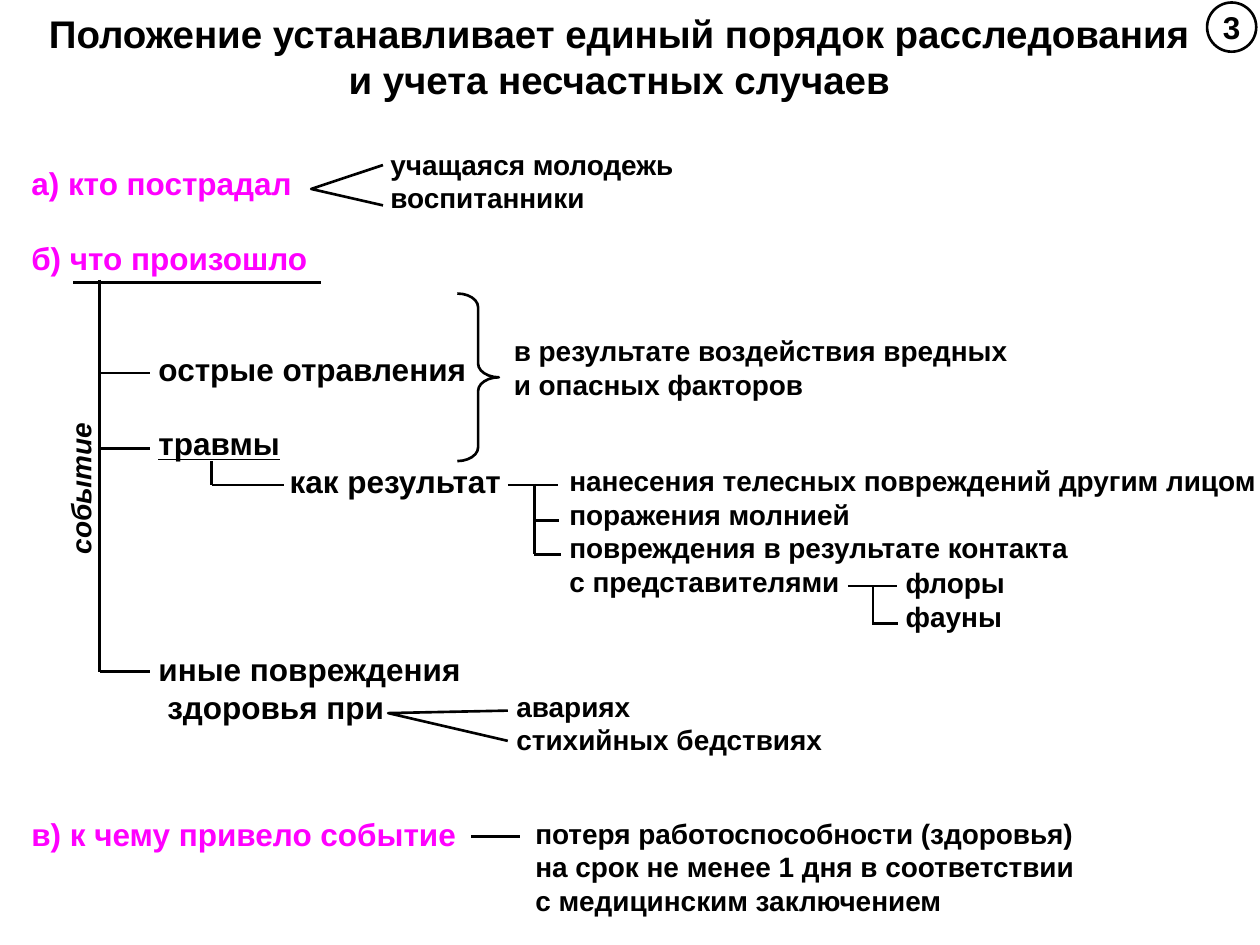
from dataclasses import dataclass

from lxml.etree import SubElement
from pptx import Presentation
from pptx.dml.color import RGBColor as RGB
from pptx.enum.shapes import MSO_CONNECTOR as CONN, MSO_SHAPE as SHAPE
from pptx.enum.text import MSO_ANCHOR as ANCHOR, MSO_AUTO_SIZE as AUTO, PP_ALIGN as ALIGN
from pptx.oxml.ns import qn
from pptx.util import Emu, Pt

EMU_PER_PX = 9144


@dataclass(frozen=True)
class Theme:
    """Colours, font and sizes of the slide."""
    font: str = "Arial"
    ink: RGB = RGB(0, 0, 0)
    accent: RGB = RGB(255, 0, 255)
    paper: RGB = RGB(255, 255, 255)
    title: int = 22
    label: int = 18
    detail: int = 16
    stroke: float = 1.5


@dataclass(frozen=True)
class Box:
    """Region of the slide in px."""
    x: int
    y: int
    w: int
    h: int

    def inner(self, dx, dy, w, h):
        """Return a box placed relative to this one."""
        return Box(self.x + dx, self.y + dy, w, h)

    def emu(self):
        """Return left, top, width and height in EMU."""
        return [px(v) for v in (self.x, self.y, self.w, self.h)]


T = Theme()


def px(v):
    """Turn px into EMU."""
    return Emu(v * EMU_PER_PX)


def write(sp, *lines, size=T.detail, color=T.ink, align=ALIGN.LEFT, anchor=ANCHOR.TOP,
          italic=False, underline=False):
    """Fill a shape with one bold paragraph per line."""
    tf = sp.text_frame
    tf.word_wrap, tf.auto_size, tf.vertical_anchor = True, AUTO.NONE, anchor
    for i, text in enumerate(lines):
        p = tf.paragraphs[0] if i == 0 else tf.add_paragraph()
        p.alignment = align
        r = p.add_run()
        r.text = text
        f = r.font
        f.name, f.size, f.bold, f.italic, f.underline = T.font, Pt(size), True, italic, underline
        f.color.rgb = color
    return sp


def text(s, box, *lines, **fmt):
    """Add a text box."""
    return write(s.shapes.add_textbox(*box.emu()), *lines, **fmt)


def label(s, box, *lines, **fmt):
    """Add a text box in the label size."""
    return text(s, box, *lines, size=T.label, **fmt)


def outline(sp):
    """Give a shape a plain outline and no fill."""
    sp.shadow.inherit = False
    sp.fill.background()
    sp.line.color.rgb, sp.line.width = T.ink, Pt(T.stroke)
    return sp


def line(s, box, x1, y1, x2, y2):
    """Draw a straight line in the box's coordinates."""
    c = s.shapes.add_connector(CONN.STRAIGHT, px(box.x + x1), px(box.y + y1),
                               px(box.x + x2), px(box.y + y2))
    c.line.color.rgb, c.line.width = T.ink, Pt(T.stroke)
    SubElement(c._element.spPr, qn("a:effectLst"))
    return c


def fork(s, box, *points):
    """Draw an open two-pronged outline."""
    start, *rest = [(box.x + x, box.y + y) for x, y in points]
    fb = s.shapes.build_freeform(*start, scale=EMU_PER_PX)
    fb.add_line_segments(rest, close=False)
    return outline(fb.convert_to_shape())


def comb(s, box, trunk, ticks):
    """Draw a vertical trunk (x, top, bottom) with ticks (x1, x2, y)."""
    x, top, bottom = trunk
    line(s, box, x, top, x, bottom)
    for x1, x2, y in ticks:
        line(s, box, x1, y, x2, y)


def header(s, box):
    """Place the title and the numbered badge."""
    title = s.shapes.title
    title.left, title.top, title.width, title.height = box.inner(25, 3, 933, 83).emu()
    write(title, "Положение устанавливает единый порядок расследования",
          "и учета несчастных случаев", size=T.title, align=ALIGN.CENTER)
    badge = outline(s.shapes.add_shape(SHAPE.OVAL, *box.inner(958, 2, 39, 39).emu()))
    write(badge, "3", size=T.label, align=ALIGN.CENTER, anchor=ANCHOR.MIDDLE)
    tf = badge.text_frame
    tf.margin_left = tf.margin_right = tf.margin_top = tf.margin_bottom = 0


def victims(s, box):
    """Place the branch about who was hurt."""
    label(s, box.inner(0, 13, 241, 40), "а) кто пострадал", color=T.accent)
    text(s, box.inner(285, 0, 250, 64), "учащаяся молодежь", "воспитанники")
    fork(s, box, (289, 51), (232, 38), (289, 19))


def event(s, box):
    """Place the event heading, its trunk and the poisoning branch."""
    label(s, box.inner(0, 0, 250, 40), "б) что произошло", color=T.accent)
    line(s, box, 43, 39, 240, 39)
    comb(s, box, (64, 37, 348), [(64, 104, y) for y in (111, 171, 348)])
    side = text(s, box.inner(-13, 184, 124, 37), "событие", italic=True)
    side.rotation = 270
    label(s, box.inner(101, 88, 270, 40), "острые отравления")
    brace = outline(s.shapes.add_shape(SHAPE.RIGHT_BRACE, *box.inner(348, 48, 33, 133).emu()))
    brace.adjustments[0], brace.adjustments[1] = 0.33, 0.5
    text(s, box.inner(383, 75, 426, 64), "в результате воздействия вредных", "и опасных факторов")


def injuries(s, box):
    """Place the injuries branch with its causes."""
    label(s, box.inner(0, 0, 140, 40), "травмы", underline=True)
    label(s, box.inner(104, 30, 194, 40), "как результат")
    comb(s, box, (52, 34, 53), [(52, 109, 53)])
    text(s, box.inner(326, 31, 570, 117), "нанесения телесных повреждений другим лицом",
         "поражения молнией", "повреждения в результате контакта", "с представителями")
    comb(s, box, (308, 52, 108), [(287, 327, 53), (308, 328, 81), (308, 329, 108)])
    text(s, box.inner(593, 112, 100, 64), "флоры", "фауны")
    comb(s, box, (577, 133, 164), [(557, 596, 133), (577, 597, 163)])


def other_harm(s, box):
    """Place the branch about other harm to health."""
    label(s, box.inner(0, 0, 270, 40), "иные повреждения")
    label(s, box.inner(7, 30, 200, 40), "здоровья при")
    text(s, box.inner(284, 31, 268, 64), "авариях", "стихийных бедствиях")
    fork(s, box, (287, 77), (192, 55), (287, 53))


def outcome(s, box):
    """Place the branch about the consequence."""
    head = label(s, box.inner(0, 0, 359, 44), "в) к чему привело событие", color=T.accent)
    text(s, box.inner(400, 1, 460, 90), "потеря работоспособности (здоровья)",
         "на срок не менее 1 дня в соответствии", "с медицинским заключением")
    line(s, box, 359, 22, 398, 22).begin_connect(head, 3)


def main():
    """Build and save the slide."""
    prs = Presentation()
    prs.slide_width, prs.slide_height = px(1000), px(750)
    s = prs.slides.add_slide(prs.slide_layouts[5])
    s.background.fill.solid()
    s.background.fill.fore_color.rgb = T.paper
    header(s, Box(0, 0, 1000, 90))
    victims(s, Box(15, 112, 540, 64))
    event(s, Box(15, 185, 810, 350))
    injuries(s, Box(116, 332, 884, 177))
    other_harm(s, Box(116, 511, 552, 95))
    outcome(s, Box(15, 642, 860, 91))
    prs.save("out.pptx")


if __name__ == "__main__":
    main()
